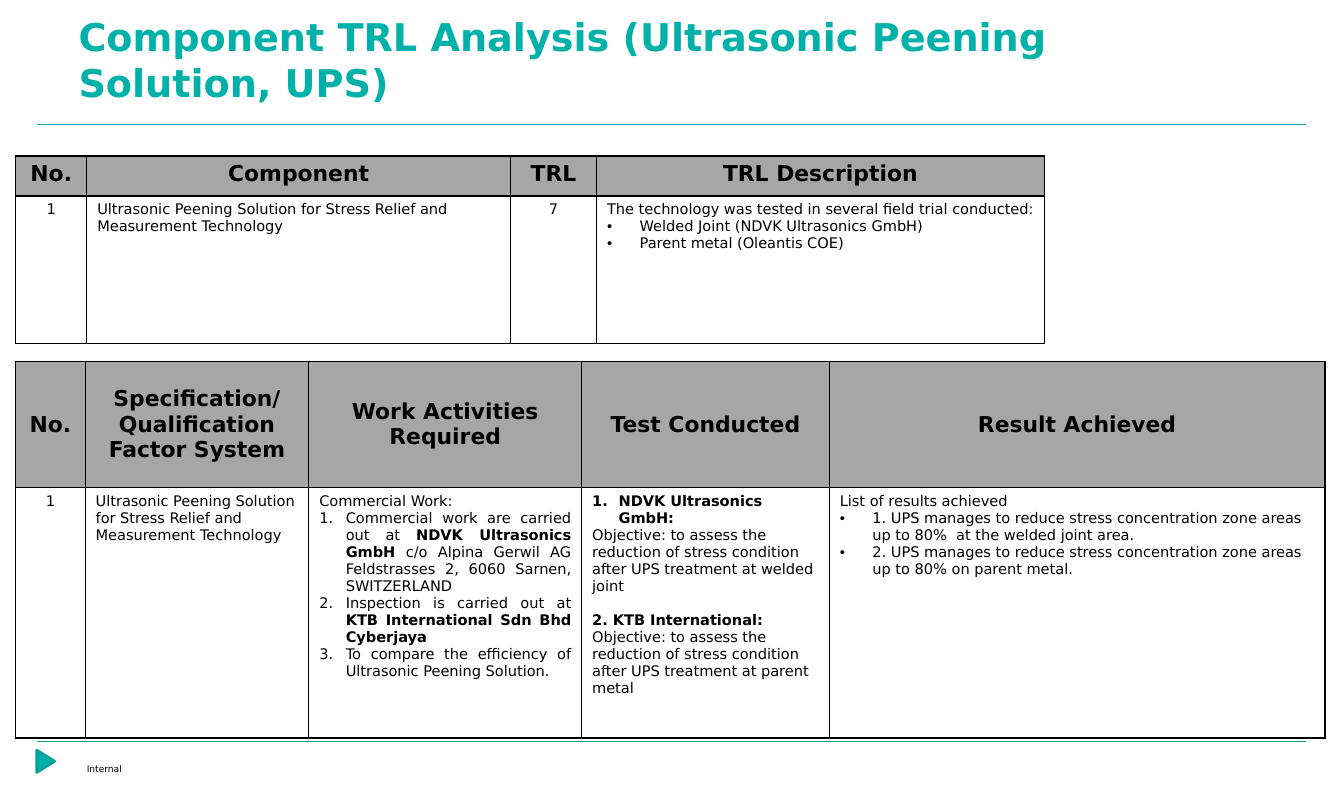
from dataclasses import dataclass

from lxml import etree
from pptx import Presentation
from pptx.dml.color import RGBColor
from pptx.enum.shapes import MSO_CONNECTOR as Connector, MSO_SHAPE as Shape
from pptx.enum.text import MSO_ANCHOR as Anchor, PP_ALIGN as Align
from pptx.oxml import parse_xml
from pptx.oxml.ns import nsdecls, qn
from pptx.util import Cm, Pt

FONT = "DejaVu Sans"
TEAL, DARK_TEAL, BLACK, GREY = "00B1A9", "00A29A", "000000", "A6A6A6"
SOLUTION = "Ultrasonic Peening Solution for Stress Relief and Measurement Technology"
OBJECTIVE = "Objective: to assess the reduction of stress condition after UPS treatment at "
REDUCTION = "UPS manages to reduce stress concentration zone areas up to 80% "


@dataclass
class Para:
    runs: tuple
    align: Align = Align.LEFT
    bullet: str = ""
    before: float = 0


def plain(text, align=Align.LEFT):
    return Para(((text, False),), align)


def strong(text, align=Align.LEFT, bullet="", before=0):
    return Para(((text, True),), align, bullet, before)


def dotted(text):
    return Para(((text, False),), bullet="dot")


def numbered(*runs):
    return Para(runs, Align.JUSTIFY, "number")


def color(value):
    return RGBColor.from_string(value)


def add_run(p, text, size, bold=False, font_color=BLACK):
    r = p.add_run()
    r.text = text
    r.font.name, r.font.size, r.font.bold = FONT, Pt(size), bold
    r.font.color.rgb = color(font_color)


def add_bullet(p, kind):
    indent = Cm(0.79 if kind == "dot" else 0.64)
    pPr = p._p.get_or_add_pPr()
    pPr.set("marL", str(indent))
    pPr.set("indent", str(-indent))
    if kind == "dot":
        etree.SubElement(pPr, qn("a:buFont")).set("typeface", "Arial")
        etree.SubElement(pPr, qn("a:buChar")).set("char", "•")
    else:
        etree.SubElement(pPr, qn("a:buAutoNum")).set("type", "arabicPeriod")


def add_borders(cell):
    tcPr = cell._tc.get_or_add_tcPr()
    for side in ("lnL", "lnR", "lnT", "lnB"):
        tcPr.append(parse_xml(
            f'<a:{side} {nsdecls("a")} w="{Pt(1)}"><a:solidFill>'
            f'<a:srgbClr val="{BLACK}"/></a:solidFill></a:{side}>'))


def fill_cell(cell, paras, size, anchor, fill=None):
    add_borders(cell)
    cell.vertical_anchor = anchor
    if fill:
        cell.fill.solid()
        cell.fill.fore_color.rgb = color(fill)
    else:
        cell.fill.background()
    tf = cell.text_frame
    for i, para in enumerate(paras):
        p = tf.add_paragraph() if i else tf.paragraphs[0]
        p.alignment = para.align
        if para.before:
            p.space_before = Pt(para.before)
        if para.bullet:
            add_bullet(p, para.bullet)
        for text, bold in para.runs:
            add_run(p, text, size, bold)


def add_grid(s, top, widths, heights, headers, body, header_anchor):
    frame = s.shapes.add_table(2, len(widths), Cm(0.38), Cm(top),
                               Cm(sum(widths)), Cm(sum(heights)))
    table = frame.table
    table.first_row = table.horz_banding = False
    for column, width in zip(table.columns, widths):
        column.width = Cm(width)
    for row, height in zip(table.rows, heights):
        row.height = Cm(height)
    for i, (header, paras) in enumerate(zip(headers, body)):
        fill_cell(table.cell(0, i), [strong(header, Align.CENTER)], 15, header_anchor, GREY)
        fill_cell(table.cell(1, i), paras, 10, Anchor.TOP)


def add_text(s, box, text, size, anchor, bold=False, font_color=BLACK):
    tf = s.shapes.add_textbox(*map(Cm, box)).text_frame
    tf.word_wrap = True
    tf.vertical_anchor = anchor
    add_run(tf.paragraphs[0], text, size, bold, font_color)


def add_rule(s, y, line_color):
    rule = s.shapes.add_connector(Connector.STRAIGHT, Cm(0.89), Cm(y), Cm(31.6), Cm(y))
    rule.line.color.rgb = color(line_color)
    rule.line.width = Pt(0.75)
    etree.SubElement(rule._element.spPr, qn("a:effectLst"))


def add_marker(s):
    sp = s.shapes.add_shape(Shape.ISOSCELES_TRIANGLE, Cm(0.84), Cm(18.19), Cm(0.53), Cm(0.43))
    sp.rotation = 90
    sp.shadow.inherit = False
    sp.fill.solid()
    sp.fill.fore_color.rgb = color(TEAL)
    sp.line.color.rgb = color(DARK_TEAL)
    sp.line.width = Pt(2)


def add_component_table(s):
    body = [
        [plain("1", Align.CENTER)],
        [plain(SOLUTION)],
        [plain("7", Align.CENTER)],
        [plain("The technology was tested in several field trial conducted:"),
         dotted("Welded Joint (NDVK Ultrasonics GmbH)"),
         dotted("Parent metal (Oleantis COE)")],
    ]
    add_grid(s, 3.77, (1.72, 10.25, 2.08, 10.83), (0.97, 3.56),
             ("No.", "Component", "TRL", "TRL Description"), body, Anchor.TOP)


def add_result_table(s):
    body = [
        [plain("1", Align.CENTER)],
        [plain(SOLUTION)],
        [plain("Commercial Work:", Align.JUSTIFY),
         numbered(("Commercial work are carried out at ", False),
                  ("NDVK Ultrasonics GmbH", True),
                  (" c/o Alpina Gerwil AG Feldstrasses 2, 6060 Sarnen, SWITZERLAND", False)),
         numbered(("Inspection is carried out at ", False),
                  ("KTB International Sdn Bhd Cyberjaya", True)),
         numbered(("To compare the efficiency of Ultrasonic Peening Solution.", False))],
        [strong("NDVK Ultrasonics GmbH:", bullet="number"),
         plain(OBJECTIVE + "welded joint"),
         strong("2. KTB International:", before=11.6),
         plain(OBJECTIVE + "parent metal")],
        [plain("List of results achieved"),
         dotted("1. " + REDUCTION + " at the welded joint area."),
         dotted("2. " + REDUCTION + "on parent metal.")],
    ]
    add_grid(s, 8.74, (1.68, 5.41, 6.6, 5.99, 11.99), (3.05, 6.05),
             ("No.", "Specification/ Qualification Factor System", "Work Activities Required",
              "Test Conducted", "Result Achieved"), body, Anchor.MIDDLE)


def main():
    prs = Presentation()
    prs.slide_width, prs.slide_height = Cm(32.51), Cm(19.05)
    s = prs.slides.add_slide(prs.slide_layouts[6])
    add_rule(s, 17.93, DARK_TEAL)
    add_rule(s, 3.02, "00ACA4")
    add_marker(s)
    add_text(s, (1.65, 0.66, 25.25, 1.55),
             "Component TRL Analysis (Ultrasonic Peening Solution, UPS)",
             26.2, Anchor.MIDDLE, True, TEAL)
    add_text(s, (1.85, 18.34, 28.8, 0.65), "Internal", 6.3, Anchor.TOP)
    add_component_table(s)
    add_result_table(s)
    prs.save("out.pptx")


if __name__ == "__main__":
    main()
